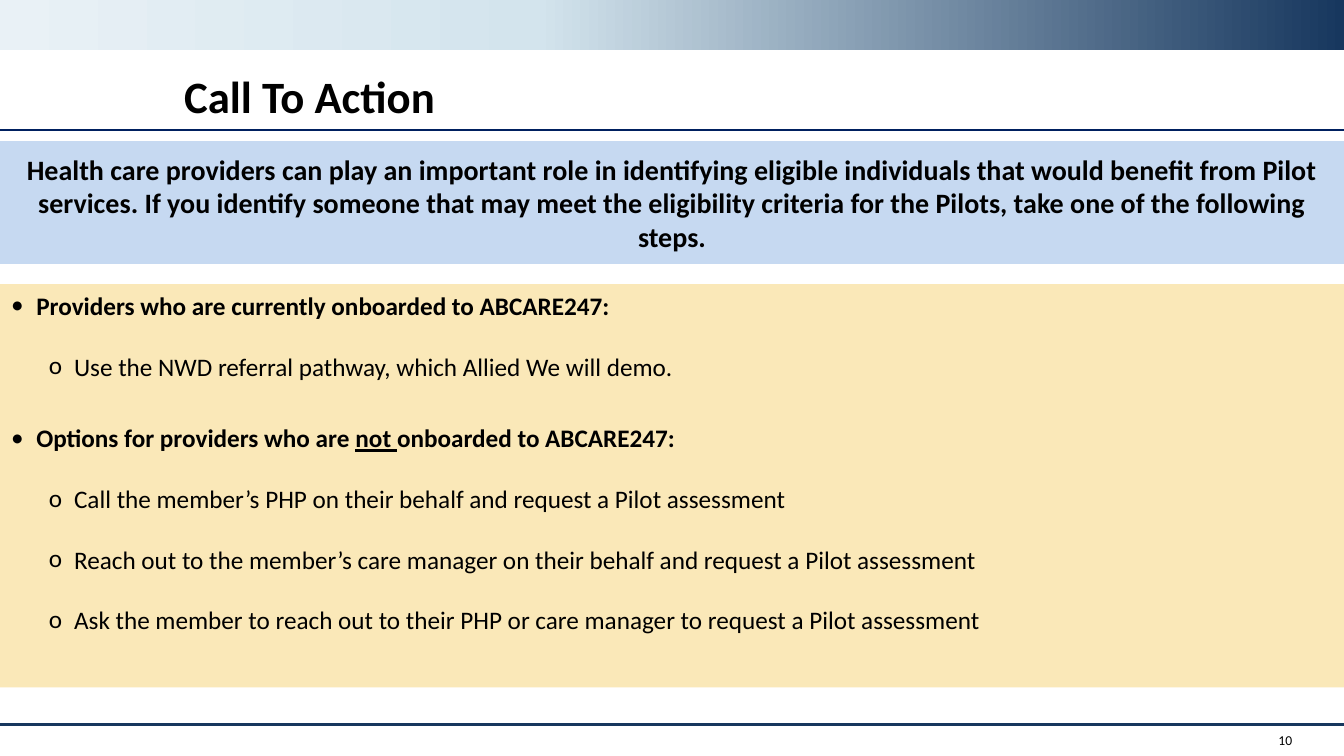
"""Build the Call To Action slide."""
from dataclasses import dataclass

from lxml.etree import SubElement
from pptx import Presentation
from pptx.dml.color import RGBColor
from pptx.enum.shapes import MSO_CONNECTOR, MSO_SHAPE
from pptx.enum.text import MSO_ANCHOR, MSO_AUTO_SIZE, PP_ALIGN
from pptx.oxml import parse_xml
from pptx.oxml.ns import nsdecls, qn
from pptx.util import Pt

WIDTH, HEIGHT = 960, 540
FONT = "Calibri"
COLORS = {
    "black": "000000",
    "navy": "17375E",
    "rule": "002060",
    "mist": "D3E4ED",
    "pale": "E9F1F6",
    "callout": "C6D9F1",
    "panel": "FAE8B8",
}
BANNER_STOPS = ((0, "navy"), (60, "mist"), (100, "pale"))


@dataclass(frozen=True)
class Rule:
    """A full-width horizontal line."""

    y: float
    color: str
    weight: float


@dataclass(frozen=True)
class Level:
    """The look of one bullet level."""

    bullet: str
    margin: float
    before: float
    bold: bool


@dataclass(frozen=True)
class Item:
    """A bullet made of (text, underlined) runs."""

    level: int
    runs: tuple[tuple[str, bool], ...]


RULES = (Rule(517.7, "navy", 2.25), Rule(92.9, "rule", 2))
LEVELS = (Level("•", 18, 11.8, True), Level("o", 45, 3.7, False))
ITEMS = (
    Item(0, (("Providers who are currently onboarded to ABCARE247:", False),)),
    Item(1, (("Use the NWD referral pathway, which Allied We will demo.", False),)),
    Item(0, (("Options for providers who are ", False), ("not ", True),
             ("onboarded to ABCARE247:", False))),
    Item(1, (("Call the member’s PHP on their behalf and request a Pilot assessment", False),)),
    Item(1, (("Reach out to the member’s care manager on their behalf and request "
              "a Pilot assessment", False),)),
    Item(1, (("Ask the member to reach out to their PHP or care manager to request "
              "a Pilot assessment", False),)),
)
CALLOUT = (
    "Health care providers can play an important role in identifying eligible "
    "individuals that would benefit from Pilot services. If you identify someone "
    "that may meet the eligibility criteria for the Pilots, take one of the "
    "following steps."
)


def rgb(name: str) -> RGBColor:
    """Look up a named colour."""
    return RGBColor.from_string(COLORS[name])


def add_run(p, text: str, size: float, bold: bool = False, underline: bool = False) -> None:
    """Append one formatted run."""
    r = p.add_run()
    r.text = text
    r.font.name = FONT
    r.font.size = Pt(size)
    r.font.bold = bold
    r.font.underline = underline
    r.font.color.rgb = rgb("black")


def set_frame(tf, anchor, inset_x: float = 7.9, inset_y: float = 4.3) -> None:
    """Set wrapping, anchor and insets of a text frame."""
    tf.word_wrap = True
    tf.auto_size = MSO_AUTO_SIZE.NONE
    tf.vertical_anchor = anchor
    tf.margin_left = tf.margin_right = Pt(inset_x)
    tf.margin_top = tf.margin_bottom = Pt(inset_y)


def add_band(s, top: float, height: float, color: str):
    """Add a full-width filled rectangle without outline."""
    sp = s.shapes.add_shape(MSO_SHAPE.RECTANGLE, Pt(0), Pt(top), Pt(WIDTH), Pt(height))
    sp.shadow.inherit = False
    sp.fill.solid()
    sp.fill.fore_color.rgb = rgb(color)
    sp.line.fill.background()
    return sp


def add_banner(s) -> None:
    """Add the top band with its right-to-left gradient."""
    sp = add_band(s, 0, 36, "navy")
    stops = "".join(
        f'<a:gs pos="{pos * 1000}"><a:srgbClr val="{COLORS[color]}"/></a:gs>'
        for pos, color in BANNER_STOPS
    )
    grad = parse_xml(
        f'<a:gradFill {nsdecls("a")} rotWithShape="1"><a:gsLst>{stops}</a:gsLst>'
        '<a:lin ang="10800000" scaled="0"/></a:gradFill>'
    )
    spPr = sp.element.spPr
    spPr.replace(spPr.find(qn("a:solidFill")), grad)


def add_rule(s, rule: Rule) -> None:
    """Draw a horizontal rule across the slide."""
    cxn = s.shapes.add_connector(
        MSO_CONNECTOR.STRAIGHT, Pt(0), Pt(rule.y), Pt(WIDTH), Pt(rule.y))
    cxn.line.color.rgb = rgb(rule.color)
    cxn.line.width = Pt(rule.weight)
    SubElement(cxn.element.spPr, qn("a:effectLst"))


def add_item(p, item: Item) -> None:
    """Fill a paragraph with one bulleted item."""
    level = LEVELS[item.level]
    p.level = item.level
    p.alignment = PP_ALIGN.LEFT
    p.space_before = Pt(level.before)
    p.space_after = Pt(18)
    pPr = p._p.get_or_add_pPr()
    pPr.set("marL", str(Pt(level.margin)))
    pPr.set("indent", str(Pt(-18)))
    SubElement(pPr, qn("a:buFont"), typeface=FONT)
    SubElement(pPr, qn("a:buChar"), char=level.bullet)
    for text, underline in item.runs:
        add_run(p, text, 18, level.bold, underline)


def add_title(s) -> None:
    """Place and format the title placeholder."""
    sp = s.shapes.title
    sp.left, sp.top, sp.width, sp.height = Pt(70.6), Pt(49), Pt(823.7), Pt(43.2)
    set_frame(sp.text_frame, MSO_ANCHOR.TOP)
    p = sp.text_frame.paragraphs[0]
    p.alignment = PP_ALIGN.LEFT
    p.line_spacing = 0.9
    p._p.get_or_add_pPr().set("marL", str(Pt(53)))
    add_run(p, "Call To Action", 32, True)


def add_panel(s) -> None:
    """Add the panel of steps."""
    tf = add_band(s, 203, 288, "panel").text_frame
    set_frame(tf, MSO_ANCHOR.TOP)
    for i, item in enumerate(ITEMS):
        add_item(tf.add_paragraph() if i else tf.paragraphs[0], item)


def add_callout(s) -> None:
    """Add the introductory band."""
    tf = add_band(s, 100.8, 87.8, "callout").text_frame
    set_frame(tf, MSO_ANCHOR.MIDDLE, 7.2, 3.6)
    p = tf.paragraphs[0]
    p.alignment = PP_ALIGN.CENTER
    add_run(p, CALLOUT, 20, True)


def add_page_number(s) -> None:
    """Add the page number below the bottom rule."""
    sp = s.shapes.add_textbox(Pt(872), Pt(517.7), Pt(59), Pt(22.3))
    set_frame(sp.text_frame, MSO_ANCHOR.MIDDLE)
    p = sp.text_frame.paragraphs[0]
    p.alignment = PP_ALIGN.RIGHT
    add_run(p, "10", 9.7)


def main() -> None:
    """Build and save the presentation."""
    prs = Presentation()
    prs.slide_width, prs.slide_height = Pt(WIDTH), Pt(HEIGHT)
    s = prs.slides.add_slide(prs.slide_layouts.get_by_name("Title Only"))
    add_banner(s)
    for rule in RULES:
        add_rule(s, rule)
    add_title(s)
    add_panel(s)
    add_page_number(s)
    add_callout(s)
    prs.save("out.pptx")


if __name__ == "__main__":
    main()
